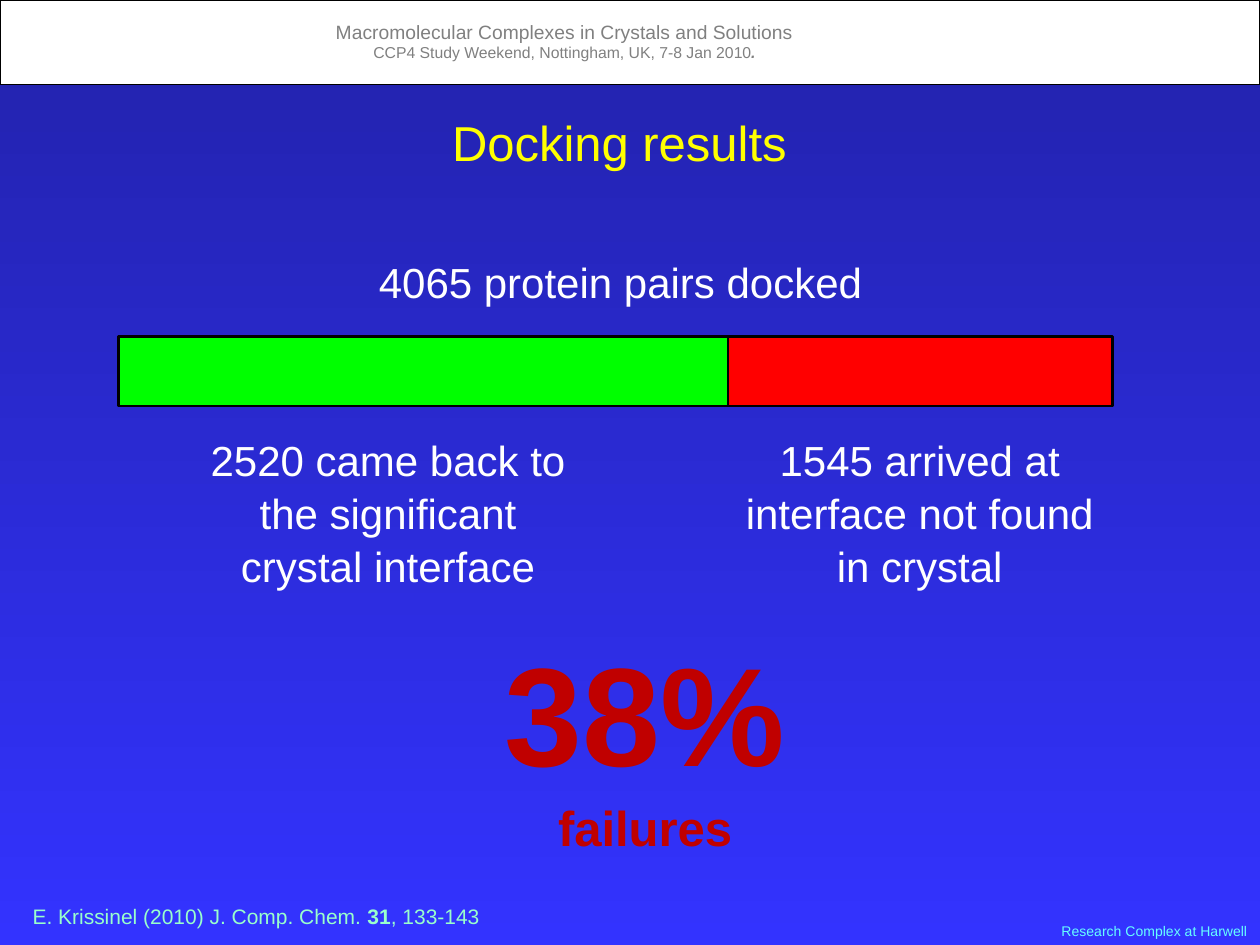
from dataclasses import dataclass

from pptx import Presentation
from pptx.dml.color import RGBColor
from pptx.enum.shapes import MSO_SHAPE
from pptx.enum.text import MSO_AUTO_SIZE, PP_ALIGN
from pptx.slide import Slide
from pptx.util import Inches, Pt

RECTANGLE = MSO_SHAPE.RECTANGLE
GROW = MSO_AUTO_SIZE.SHAPE_TO_FIT_TEXT
LEFT, CENTER, RIGHT = PP_ALIGN.LEFT, PP_ALIGN.CENTER, PP_ALIGN.RIGHT
FONT = "Arial"
COLORS = {
    "top": "2222AA",
    "bottom": "3333FF",
    "white": "FFFFFF",
    "black": "000000",
    "gray": "808080",
    "cyan": "66FFFF",
    "yellow": "FFFF00",
    "green": "00FF00",
    "red": "FF0000",
    "crimson": "C00000",
    "mint": "99FFCC",
}


@dataclass(frozen=True)
class Box:
    left: float
    top: float
    width: float
    height: float


@dataclass(frozen=True)
class Bar:
    box: Box
    fill: str
    line_width: float


@dataclass(frozen=True)
class TextRun:
    text: str
    size: float
    color: str
    bold: bool = False
    italic: bool = False


@dataclass(frozen=True)
class Label:
    box: Box
    paragraphs: tuple[tuple[TextRun, ...], ...]
    alignment: PP_ALIGN = CENTER
    line_spacing: float = 1.0


def rgb(name: str) -> RGBColor:
    """Return the named colour."""
    return RGBColor.from_string(COLORS[name])


def lengths(box: Box) -> tuple[Inches, ...]:
    """Return the box as left, top, width and height."""
    return tuple(Inches(value) for value in (box.left, box.top, box.width, box.height))


def paint_background(slide: Slide) -> None:
    """Fill the background with a gradient running downwards."""
    fill = slide.background.fill
    fill.gradient()
    fill.gradient_angle = 270
    for stop, position, name in zip(fill.gradient_stops, (0, 1), ("top", "bottom")):
        stop.position = position
        stop.color.rgb = rgb(name)


def draw_bar(slide: Slide, bar: Bar) -> None:
    """Draw a filled rectangle with a black outline."""
    shape = slide.shapes.add_shape(RECTANGLE, *lengths(bar.box))
    shape.shadow.inherit = False
    shape.fill.solid()
    shape.fill.fore_color.rgb = rgb(bar.fill)
    shape.line.color.rgb = rgb("black")
    shape.line.width = Pt(bar.line_width)


def draw_label(slide: Slide, label: Label) -> None:
    """Draw a wrapped text box run by run."""
    frame = slide.shapes.add_textbox(*lengths(label.box)).text_frame
    frame.word_wrap = True
    frame.auto_size = GROW
    for index, text_runs in enumerate(label.paragraphs):
        paragraph = frame.add_paragraph() if index else frame.paragraphs[0]
        paragraph.alignment = label.alignment
        paragraph.line_spacing = label.line_spacing
        for text_run in text_runs:
            run = paragraph.add_run()
            run.text = text_run.text
            run.font.name = FONT
            run.font.size = Pt(text_run.size)
            run.font.color.rgb = rgb(text_run.color)
            run.font.bold = text_run.bold
            run.font.italic = text_run.italic


def statement(box: Box, text: str) -> Label:
    """Return a white body label."""
    return Label(box, ((TextRun(text, 24, "white"),),), line_spacing=1.05)


BARS = (
    Bar(Box(0, 0, 10, 0.67), "white", 0.75),
    Bar(Box(0.94, 2.67, 4.84, 0.55), "green", 1.25),
    Bar(Box(5.78, 2.67, 3.05, 0.55), "red", 1.25),
)
LABELS = (
    Label(
        Box(1.33, 0.11, 6.3, 0.44),
        (
            (TextRun("Macromolecular Complexes in Crystals and Solutions", 11, "gray"),),
            (
                TextRun("CCP4 Study Weekend, Nottingham, UK, 7-8 Jan 2010", 9, "gray"),
                TextRun(".", 9, "gray", bold=True, italic=True),
            ),
        ),
    ),
    Label(
        Box(8.2, 7.27, 1.8, 0.23),
        ((TextRun("Research Complex at Harwell", 8, "cyan"),),),
        RIGHT,
    ),
    Label(Box(0.5, 0.84, 8.83, 0.57), ((TextRun("Docking results", 28, "yellow"),),)),
    statement(Box(2.66, 1.97, 4.53, 0.52), "4065 protein pairs docked"),
    statement(
        Box(1.48, 3.38, 3.2, 1.36),
        "2520 came back to the significant crystal interface",
    ),
    statement(
        Box(5.7, 3.38, 3.2, 1.36), "1545 arrived at interface not found in crystal"
    ),
    Label(
        Box(3.52, 4.86, 3.2, 1.99),
        (
            (
                TextRun("38% ", 80, "crimson", bold=True),
                TextRun("failures", 28, "crimson", bold=True),
            ),
        ),
        line_spacing=1.05,
    ),
    Label(
        Box(0.16, 7.12, 7.28, 0.3),
        (
            (
                TextRun("E. Krissinel (2010) J. Comp. Chem. ", 12, "mint"),
                TextRun("31", 12, "mint", bold=True),
                TextRun(", 133-143", 12, "mint"),
            ),
        ),
        LEFT,
    ),
)


def main() -> None:
    """Build and save the docking results slide."""
    presentation = Presentation()
    presentation.slide_width = Inches(10)
    presentation.slide_height = Inches(7.5)
    slide = presentation.slides.add_slide(presentation.slide_layouts[6])
    paint_background(slide)
    for bar in BARS:
        draw_bar(slide, bar)
    for label in LABELS:
        draw_label(slide, label)
    presentation.save("out.pptx")


if __name__ == "__main__":
    main()
